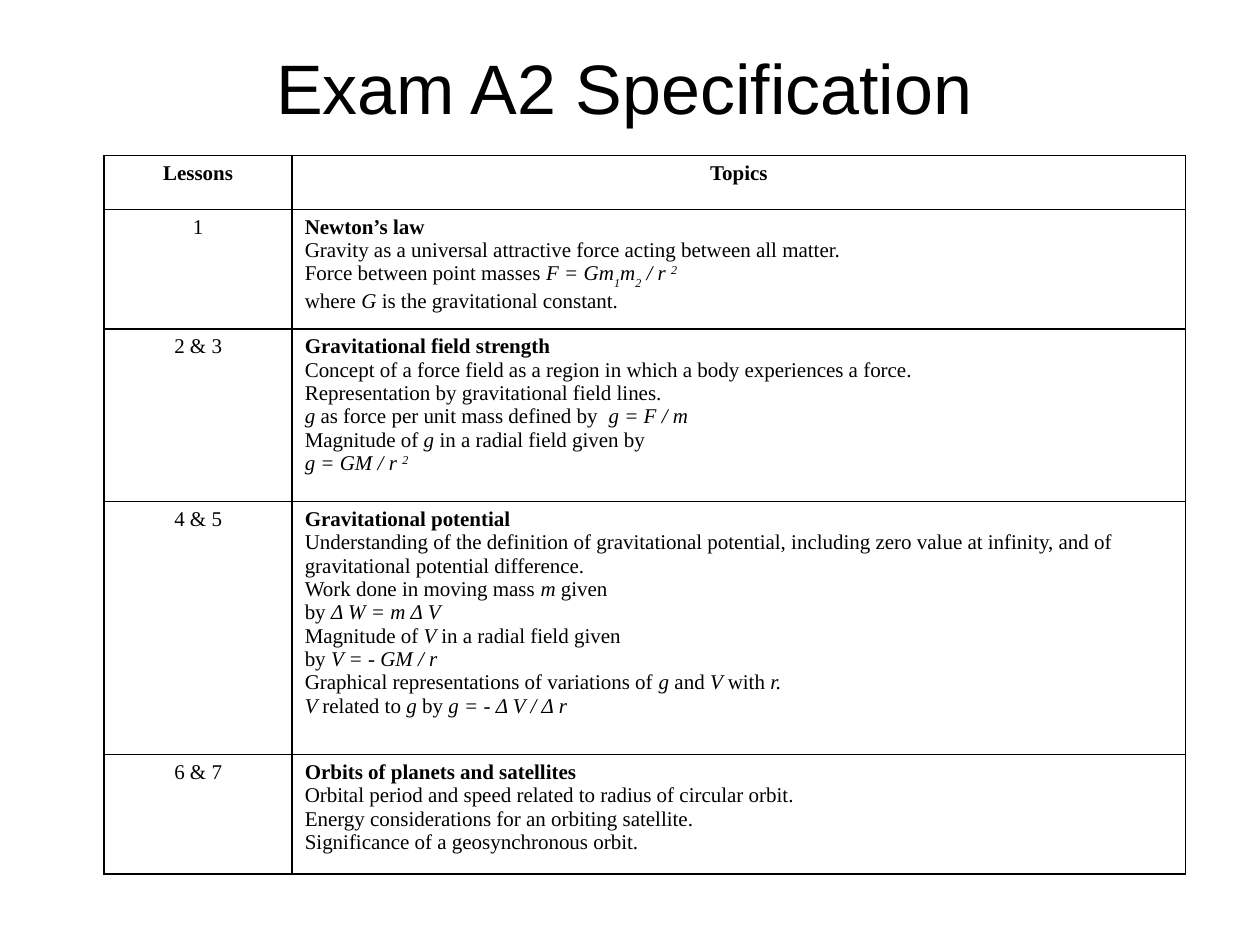
from dataclasses import dataclass
from itertools import groupby

from lxml import etree
from pptx import Presentation
from pptx.dml.color import RGBColor
from pptx.enum import text
from pptx.oxml import ns
from pptx.util import Cm, Pt


@dataclass(frozen=True)
class Theme:
    ink: str = "000000"
    title_font: str = "Arial"
    body_font: str = "Times New Roman"
    title_size: int = 40
    body_size: int = 12
    border_width: int = 1


@dataclass(frozen=True)
class Lesson:
    number: str
    heading: str
    topics: tuple[str, ...]
    height: float


THEME = Theme()
COLUMN_WIDTHS = (3.79, 18.01)
HEADER_HEIGHT = 1.09
BASELINES = {"~": "-30000", "^": "30000"}

# In topics, * toggles italics, ~ toggles subscript and ^ toggles superscript.
LESSONS = (
    Lesson("1", "Newton’s law", (
        "Gravity as a universal attractive force acting between all matter.",
        "Force between point masses *F = Gm~1~m~2~ / r ^2^*",
        "where *G *is the gravitational constant.",
    ), 2.41),
    Lesson("2 & 3", "Gravitational field strength", (
        "Concept of a force field as a region in which a body experiences a force.",
        "Representation by gravitational field lines.",
        "*g *as force per unit mass defined by  *g = F / m*",
        "Magnitude of *g *in a radial field given by",
        "*g = GM / r ^2^*",
    ), 3.48),
    Lesson("4 & 5", "Gravitational potential", (
        "Understanding of the definition of gravitational potential, including "
        "zero value at infinity, and of gravitational potential difference.",
        "Work done in moving mass *m *given",
        "by *Δ W = m Δ V*",
        "Magnitude of *V *in a radial field given",
        "by *V = - GM / r*",
        "Graphical representations of variations of *g *and *V *with *r.*",
        "*V *related to *g *by *g = - Δ V / Δ r*",
    ), 5.1),
    Lesson("6 & 7", "Orbits of planets and satellites", (
        "Orbital period and speed related to radius of circular orbit.",
        "Energy considerations for an orbiting satellite.",
        "Significance of a geosynchronous orbit.",
    ), 2.41),
)


def styled_runs(markup: str) -> list[tuple[str, bool, str]]:
    """Split markup into (words, italic, baseline mark) pieces."""
    italic, mark, letters = False, "", []
    for letter in markup:
        if letter == "*":
            italic = not italic
        elif letter in BASELINES:
            mark = "" if mark else letter
        else:
            letters.append((letter, italic, mark))
    return [("".join(item[0] for item in group), *style)
            for style, group in groupby(letters, key=lambda item: item[1:])]


def write(paragraph, markup: str, *, font: str = THEME.body_font,
          size: int = THEME.body_size, bold: bool = False,
          align=text.PP_ALIGN.LEFT) -> None:
    paragraph.alignment = align
    for words, italic, mark in styled_runs(markup):
        run = paragraph.add_run()
        run.text = words
        run.font.name, run.font.size = font, Pt(size)
        run.font.bold, run.font.italic = bold, italic
        run.font.color.rgb = RGBColor.from_string(THEME.ink)
        if mark:
            run.font._element.set("baseline", BASELINES[mark])


def style_cell(cell) -> None:
    """Give the cell four solid borders and no fill."""
    properties = cell._tc.get_or_add_tcPr()
    for side in ("lnL", "lnR", "lnT", "lnB"):
        line = etree.SubElement(properties, ns.qn(f"a:{side}"),
                                w=str(Pt(THEME.border_width)))
        fill = etree.SubElement(line, ns.qn("a:solidFill"))
        etree.SubElement(fill, ns.qn("a:srgbClr"), val=THEME.ink)
    cell.fill.background()


def add_title(slide, title: str) -> None:
    frame = slide.shapes.add_textbox(Cm(1.27), Cm(0.76), Cm(22.63), Cm(1.96)).text_frame
    frame.word_wrap = True
    frame.vertical_anchor = text.MSO_ANCHOR.MIDDLE
    write(frame.paragraphs[0], title, font=THEME.title_font,
          size=THEME.title_size, align=text.PP_ALIGN.CENTER)


def add_lesson_table(slide, lessons: tuple[Lesson, ...]) -> None:
    heights = (HEADER_HEIGHT, *(lesson.height for lesson in lessons))
    table = slide.shapes.add_table(
        len(heights), len(COLUMN_WIDTHS), Cm(2.1), Cm(3.13),
        Cm(sum(COLUMN_WIDTHS)), Cm(sum(heights))).table
    table.first_row = table.horz_banding = False
    for column, width in zip(table.columns, COLUMN_WIDTHS):
        column.width = Cm(width)
    for row, height in zip(table.rows, heights):
        row.height = Cm(height)
    for cell in table.iter_cells():
        style_cell(cell)

    for column, label in enumerate(("Lessons", "Topics")):
        write(table.cell(0, column).text_frame.paragraphs[0], label,
              bold=True, align=text.PP_ALIGN.CENTER)
    for row, lesson in enumerate(lessons, start=1):
        write(table.cell(row, 0).text_frame.paragraphs[0], lesson.number,
              align=text.PP_ALIGN.CENTER)
        frame = table.cell(row, 1).text_frame
        write(frame.paragraphs[0], lesson.heading, bold=True)
        for topic in lesson.topics:
            write(frame.add_paragraph(), topic)


def main() -> None:
    presentation = Presentation()
    presentation.slide_width, presentation.slide_height = Cm(25.4), Cm(19.05)
    slide = presentation.slides.add_slide(presentation.slide_layouts[6])
    add_title(slide, "Exam A2 Specification")
    add_lesson_table(slide, LESSONS)
    presentation.save("out.pptx")


if __name__ == "__main__":
    main()
